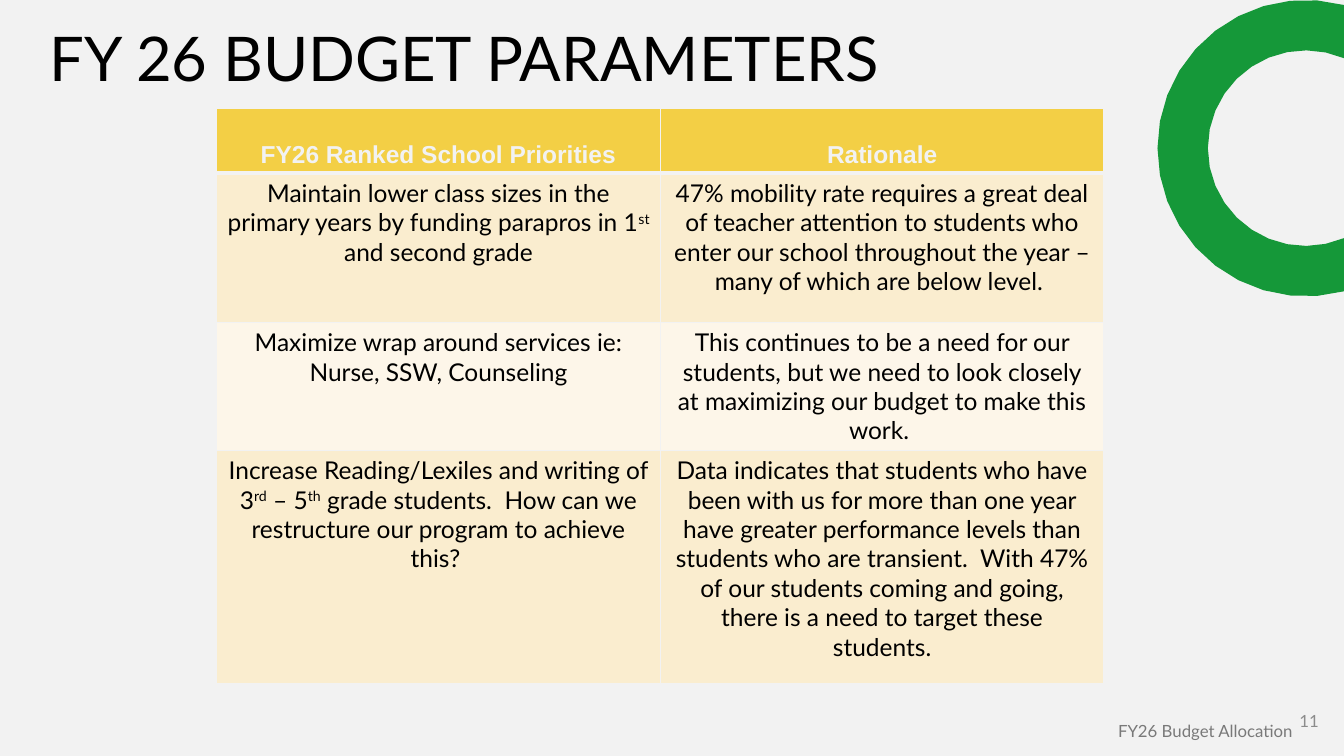
from dataclasses import dataclass
from math import acos, cos, pi, sin

from lxml.etree import SubElement
from pptx import Presentation
from pptx.dml.color import RGBColor
from pptx.enum.text import MSO_ANCHOR as Anchor, PP_ALIGN as Align
from pptx.oxml.ns import qn
from pptx.util import Inches, Pt

TITLE = "FY 26 BUDGET PARAMETERS"
HEADINGS = ("FY26 Ranked School Priorities", "Rationale")
# Text between carets is superscript.
PRIORITIES = [
    ("Maintain lower class sizes in the primary years by funding parapros in 1^st^ and second grade",
     "47% mobility rate requires a great deal of teacher attention to students who enter our "
     "school throughout the year – many of which are below level. "),
    ("Maximize wrap around services ie: Nurse, SSW, Counseling",
     "This continues to be a need for our students, but we need to look closely at maximizing "
     "our budget to make this work. "),
    ("Increase Reading/Lexiles and writing of 3^rd^ – 5^th^ grade students.  How can we "
     "restructure our program to achieve this? ",
     "Data indicates that students who have been with us for more than one year have greater "
     "performance levels than students who are transient.  With 47% of our students coming and "
     "going, there is a need to target these students."),
]
ROW_HEIGHTS = (0.64, 1.48, 1.27, 2.31)
COLUMN_WIDTH = 4.4
TABLE_LEFT, TABLE_TOP = 2.15, 1.08
SLIDE_WIDTH, SLIDE_HEIGHT = 13.33, 7.5
RING_CENTER = (12.95, 1.47)
RING_OUTER, RING_INNER = 1.47, 0.97
RING_STEPS = 20


@dataclass(frozen=True)
class Theme:
    background: str = "F2F2F2"
    ring: str = "159839"
    header: str = "F3CF45"
    bands: tuple = ("FAEDCF", "FDF6E9")
    text: str = "000000"
    number: str = "8C8C8C"
    footer: str = "797979"
    body_font: str = "Lato"
    header_font: str = "Arial"
    title_size: float = 44
    table_size: float = 17.5
    footer_size: float = 12


THEME = Theme()


def rgb(value):
    return RGBColor.from_string(value)


def paint(fill, color):
    fill.solid()
    fill.fore_color.rgb = rgb(color)


def write(paragraph, text, color, size, align, name=THEME.body_font, bold=False):
    """Write text as runs, raising the parts between carets."""
    paragraph.alignment = align
    font_format = {"name": name, "size": Pt(size), "bold": bold}
    for index, part in enumerate(text.split("^")):
        run = paragraph.add_run()
        run.text = part
        for attribute, value in font_format.items():
            setattr(run.font, attribute, value)
        run.font.color.rgb = rgb(color)
        if index % 2:
            run.font._element.set("baseline", "30000")


def set_borders(cell, top_width, bottom_width):
    properties = cell._tc.get_or_add_tcPr()
    widths = {"lnL": 1, "lnR": 1, "lnT": top_width, "lnB": bottom_width}
    for side, width in widths.items():
        line = SubElement(properties, qn(f"a:{side}"), w=str(Pt(width)))
        fill = SubElement(line, qn("a:solidFill"))
        SubElement(fill, qn("a:srgbClr"), val=THEME.background)


def ring_arc(radius):
    """Points of the arc left of the slide edge, from top to bottom."""
    center_x, center_y = RING_CENTER
    edge = acos((SLIDE_WIDTH - center_x) / radius)
    angles = (edge + (2 * pi - 2 * edge) * step / RING_STEPS for step in range(RING_STEPS + 1))
    return [(Inches(center_x + radius * cos(angle)), Inches(center_y - radius * sin(angle)))
            for angle in angles]


def add_ring(slide):
    outline = ring_arc(RING_OUTER) + ring_arc(RING_INNER)[::-1]
    builder = slide.shapes.build_freeform(*outline[0])
    builder.add_line_segments(outline[1:], close=True)
    ring = builder.convert_to_shape()
    ring.shadow.inherit = False
    paint(ring.fill, THEME.ring)
    ring.line.fill.background()


def add_title(slide):
    title = slide.shapes.title
    title.left, title.top, title.width, title.height = map(Inches, (0.49, 0.24, 8.49, 0.75))
    frame = title.text_frame
    frame_format = {"margin_left": 0, "margin_top": 0, "margin_right": 0, "margin_bottom": 0,
                    "vertical_anchor": Anchor.MIDDLE, "word_wrap": True}
    for attribute, value in frame_format.items():
        setattr(frame, attribute, value)
    paragraph = frame.paragraphs[0]
    paragraph.line_spacing = 0.9
    write(paragraph, TITLE, THEME.text, THEME.title_size, Align.LEFT)


def add_priorities_table(slide):
    rows = [HEADINGS, *PRIORITIES]
    table = slide.shapes.add_table(
        len(rows), len(HEADINGS), Inches(TABLE_LEFT), Inches(TABLE_TOP),
        Inches(COLUMN_WIDTH * len(HEADINGS)), Inches(sum(ROW_HEIGHTS))).table
    for column in table.columns:
        column.width = Inches(COLUMN_WIDTH)
    for row_index, texts in enumerate(rows):
        table.rows[row_index].height = Inches(ROW_HEIGHTS[row_index])
        is_header = row_index == 0
        for column_index, text in enumerate(texts):
            cell = table.cell(row_index, column_index)
            set_borders(cell, 3 if row_index == 1 else 1, 3 if is_header else 1)
            paint(cell.fill, THEME.header if is_header else THEME.bands[(row_index - 1) % 2])
            cell.vertical_anchor = Anchor.BOTTOM if is_header else Anchor.TOP
            write(cell.text_frame.paragraphs[0], text,
                  THEME.background if is_header else THEME.text,
                  THEME.table_size, Align.CENTER,
                  THEME.header_font if is_header else THEME.body_font, is_header)


def add_footer_text(slide, text, box, color):
    shape = slide.shapes.add_textbox(*map(Inches, box))
    frame = shape.text_frame
    frame.word_wrap = True
    frame.vertical_anchor = Anchor.MIDDLE
    write(frame.paragraphs[0], text, color, THEME.footer_size, Align.RIGHT)


def main():
    presentation = Presentation()
    presentation.slide_width = Inches(SLIDE_WIDTH)
    presentation.slide_height = Inches(SLIDE_HEIGHT)
    slide = presentation.slides.add_slide(presentation.slide_layouts.get_by_name("Title Only"))
    paint(slide.background.fill, THEME.background)
    add_ring(slide)
    add_title(slide)
    add_priorities_table(slide)
    add_footer_text(slide, "11", (10.18, 6.95, 3, 0.4), THEME.number)
    add_footer_text(slide, "FY26 Budget Allocation", (10.79, 7.05, 2.13, 0.4), THEME.footer)
    presentation.save("out.pptx")


if __name__ == "__main__":
    main()
